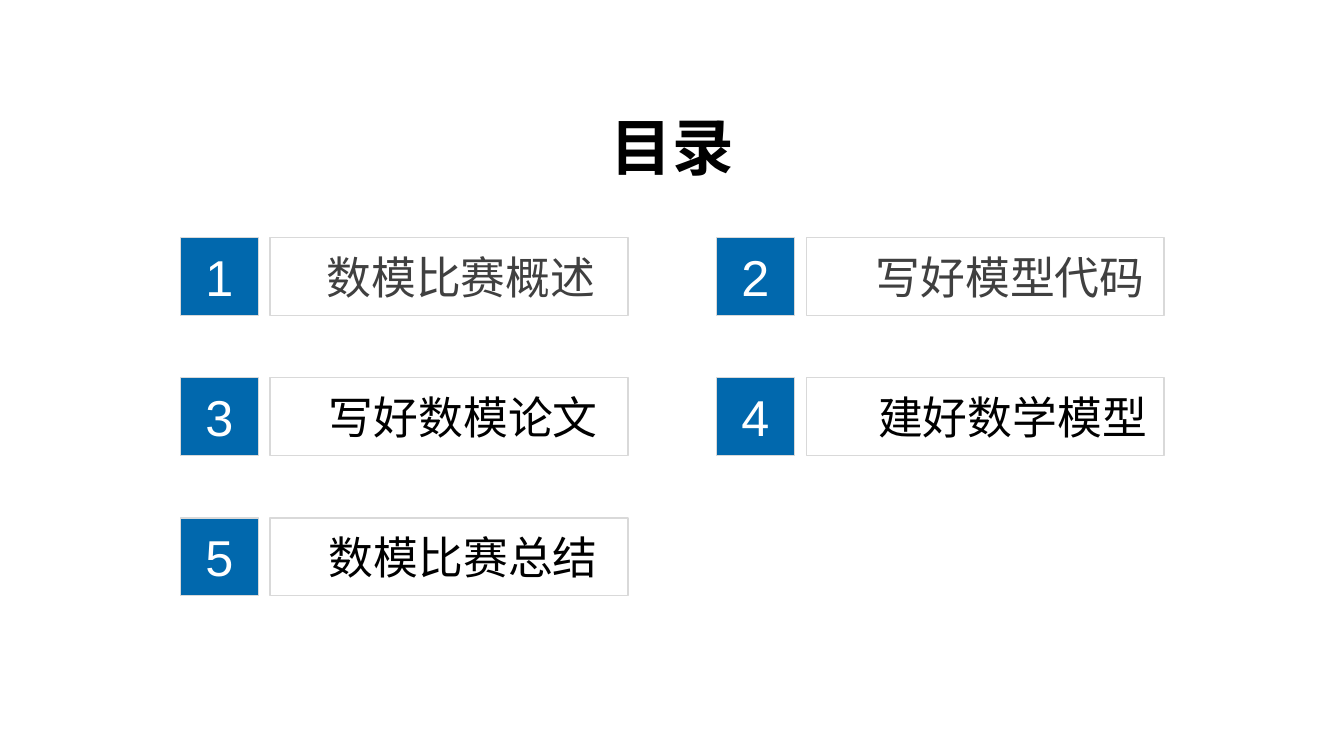
from dataclasses import dataclass

from lxml import etree
from pptx import Presentation
from pptx.dml.color import RGBColor
from pptx.enum.lang import MSO_LANGUAGE_ID
from pptx.enum.shapes import MSO_SHAPE
from pptx.enum.text import MSO_ANCHOR, MSO_AUTO_SIZE, PP_ALIGN
from pptx.oxml.ns import qn
from pptx.util import Cm, Pt

RECT = MSO_SHAPE.RECTANGLE
TOP, MIDDLE = MSO_ANCHOR.TOP, MSO_ANCHOR.MIDDLE
FIT_SHAPE = MSO_AUTO_SIZE.SHAPE_TO_FIT_TEXT
LEFT, CENTER, RIGHT = PP_ALIGN.LEFT, PP_ALIGN.CENTER, PP_ALIGN.RIGHT
CHINESE = MSO_LANGUAGE_ID.SIMPLIFIED_CHINESE
TITLE_ONLY = 5


@dataclass(frozen=True)
class Theme:
    blue: str = "0168AD"
    border: str = "D9D9D9"
    white: str = "FFFFFF"
    black: str = "000000"
    gray: str = "404040"
    latin: str = "Arial"
    cjk: str = "Noto Sans CJK SC"
    title_size: int = 44
    number_size: int = 36
    label_size: int = 32


THEME = Theme()

# Card grid, in centimetres
COLUMNS = 2
CARD_LEFT, CARD_TOP = 4.55, 5.99
COLUMN_PITCH, ROW_PITCH = 13.51, 3.53
BADGE_SIZE = 1.96
FRAME_OFFSET, FRAME_WIDTH = 2.26, 9.02
LABEL_OFFSETS = (3.43, 3.76)
LABEL_DROP, LABEL_HEIGHT = 0.17, 1.63

# Text, label width, alignment, colour, font
TOPICS = (
    ("数模比赛概述", 7.65, LEFT, THEME.gray, THEME.latin),
    ("写好模型代码", 7.44, LEFT, THEME.gray, THEME.latin),
    ("写好数模论文", 7.34, RIGHT, THEME.black, THEME.cjk),
    ("建好数学模型", 7.34, RIGHT, THEME.black, THEME.cjk),
    ("数模比赛总结", 7.34, RIGHT, THEME.black, THEME.cjk),
)


def set_text(tf, text, *, size, color, font=THEME.latin, bold=False,
             align=CENTER, anchor=TOP, fit=False):
    """Fill a text frame with one formatted run; fit grows the box unwrapped."""
    tf.vertical_anchor = anchor
    tf.word_wrap = not fit
    if fit:
        tf.auto_size = FIT_SHAPE
    p = tf.paragraphs[0]
    p.alignment = align
    r = p.add_run()
    r.text = text
    r.font.size = Pt(size)
    r.font.bold = bold
    r.font.color.rgb = RGBColor.from_string(color)
    r.font.name = font
    r.font.language_id = CHINESE
    latin = r.font._element.find(qn("a:latin"))
    east_asian = etree.Element(qn("a:ea"), typeface=font)
    latin.addnext(east_asian)


def add_title(s, text):
    title = s.shapes.title
    title.left, title.top = Cm(15.11), Cm(2.62)
    title.width, title.height = Cm(3.66), Cm(2.13)
    set_text(title.text_frame, text, size=THEME.title_size,
             color=THEME.black, bold=True, fit=True)


def add_rect(shapes, left, top, width, height, fill):
    sp = shapes.add_shape(RECT, Cm(left), Cm(top), Cm(width), Cm(height))
    sp.shadow.inherit = False
    sp.fill.solid()
    sp.fill.fore_color.rgb = RGBColor.from_string(fill)
    sp.line.color.rgb = RGBColor.from_string(THEME.border)
    sp.line.width = Pt(1)
    return sp


def add_topic(s, index, text, width, align, color, font):
    """Add a numbered badge, a frame and a label as one group."""
    row, column = divmod(index, COLUMNS)
    left = CARD_LEFT + column * COLUMN_PITCH
    top = CARD_TOP + row * ROW_PITCH
    shapes = s.shapes.add_group_shape().shapes

    badge = add_rect(shapes, left, top, BADGE_SIZE, BADGE_SIZE, THEME.blue)
    set_text(badge.text_frame, str(index + 1), size=THEME.number_size,
             color=THEME.white, anchor=MIDDLE)
    add_rect(shapes, left + FRAME_OFFSET, top, FRAME_WIDTH, BADGE_SIZE,
             THEME.white)
    label = shapes.add_textbox(Cm(left + LABEL_OFFSETS[column]),
                               Cm(top + LABEL_DROP),
                               Cm(width), Cm(LABEL_HEIGHT))
    set_text(label.text_frame, text, size=THEME.label_size, color=color,
             font=font, align=align, fit=True)


def main():
    prs = Presentation()
    prs.slide_width, prs.slide_height = Cm(33.87), Cm(19.05)
    s = prs.slides.add_slide(prs.slide_layouts[TITLE_ONLY])
    add_title(s, "目录")
    for index, topic in enumerate(TOPICS):
        add_topic(s, index, *topic)
    prs.save("out.pptx")


if __name__ == "__main__":
    main()
